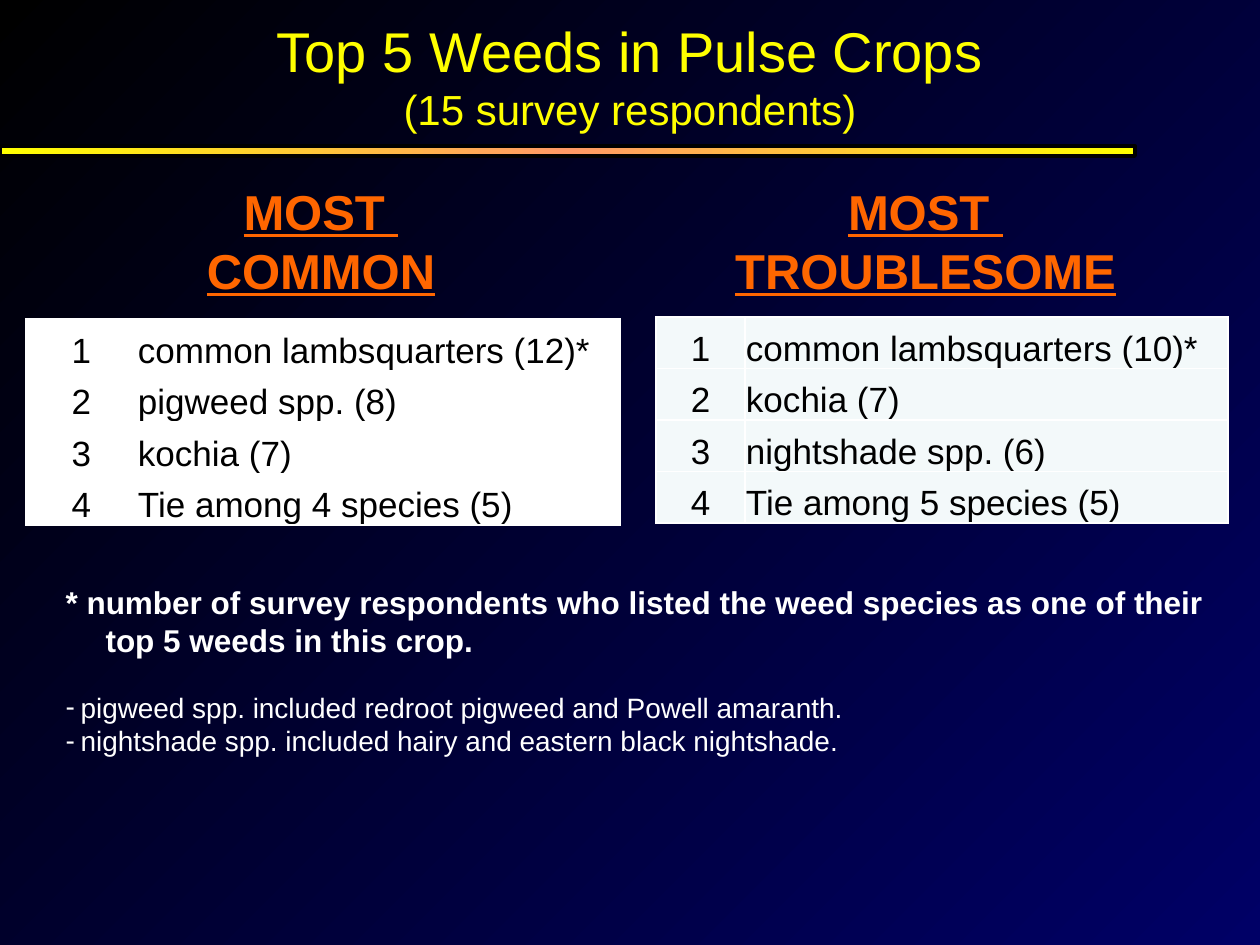
from copy import deepcopy
from dataclasses import dataclass

from lxml.etree import SubElement
from pptx import Presentation
from pptx.dml.color import RGBColor
from pptx.enum.shapes import MSO_SHAPE as Shape
from pptx.enum.text import MSO_ANCHOR as Anchor, MSO_AUTO_SIZE as AutoSize, PP_ALIGN as Align
from pptx.oxml.ns import qn
from pptx.util import Pt

PX = 914400 // 126  # EMU per px


@dataclass(frozen=True)
class Theme:
    font: str = "Arial"
    title: str = "FFFF00"
    heading: str = "FF6600"
    cell_text: str = "000000"
    notes: str = "FFFFFF"
    border: str = "FFFFFF"
    common_fill: str = "FFFFFF"
    troublesome_fill: str = "F3F9FA"
    rule_line: str = "000000"
    background: tuple = ((0, "000000"), (1, "000066"))
    rule: tuple = ((0, "FFFF00"), (0.5, "FF9966"), (1, "FFFF00"))
    title_size: int = 32
    subtitle_size: int = 24
    heading_size: int = 28
    cell_size: int = 20
    footnote_size: int = 18
    species_size: int = 16


THEME = Theme()


def rgb(color):
    return RGBColor.from_string(color)


def box(*lengths):
    return [length * PX for length in lengths]


def place(shape, left, top, width, height):
    shape.left, shape.top, shape.width, shape.height = box(left, top, width, height)


def add_run(paragraph, text, size, color, bold=False, underline=False):
    run = paragraph.add_run()
    run.text = text
    font = run.font
    font.name, font.size, font.bold, font.underline = THEME.font, Pt(size), bold, underline
    font.color.rgb = rgb(color)


def next_paragraph(frame, index):
    return frame.add_paragraph() if index else frame.paragraphs[0]


def paint_gradient(fill, element, stops, angle):
    fill.gradient()
    fill.gradient_angle = angle
    stop_list = next(element.iter(qn("a:gsLst")))
    for _ in range(len(stops) - len(stop_list)):
        stop_list.append(deepcopy(stop_list[-1]))
    for stop, (position, color) in zip(fill.gradient_stops, stops):
        stop.position = position
        stop.color.rgb = rgb(color)


def fill_title(title):
    place(title, 42, 0, 1176, 151)
    frame = title.text_frame
    frame.auto_size, frame.vertical_anchor = AutoSize.NONE, Anchor.MIDDLE
    lines = (("Top 5 Weeds in Pulse Crops", THEME.title_size),
             ("(15 survey respondents)", THEME.subtitle_size))
    for index, (text, size) in enumerate(lines):
        paragraph = next_paragraph(frame, index)
        paragraph.alignment = Align.CENTER
        add_run(paragraph, text, size, THEME.title)


def add_rule(slide):
    rule = slide.shapes.add_shape(Shape.RECTANGLE, *box(0, 146, 1135, 10))
    rule.shadow.inherit = False
    paint_gradient(rule.fill, rule._element, THEME.rule, 0)
    rule.line.color.rgb = rgb(THEME.rule_line)
    rule.line.width = Pt(2.25)


def add_heading(slide, left, width, lines):
    heading = slide.shapes.add_textbox(*box(left, 175, width, 131))
    frame = heading.text_frame
    frame.word_wrap = True
    for index, text in enumerate(lines):
        paragraph = next_paragraph(frame, index)
        paragraph.alignment = Align.CENTER
        add_run(paragraph, text, THEME.heading_size, THEME.heading, True, True)


def format_cell(cell, text, alignment, fill):
    cell.margin_left = cell.margin_right = cell.margin_top = PX
    cell.margin_bottom = 0
    cell.vertical_anchor = Anchor.BOTTOM
    properties = cell._tc.get_or_add_tcPr()
    for side in ("a:lnL", "a:lnR", "a:lnT", "a:lnB"):
        line = SubElement(properties, qn(side), w=str(Pt(1)))
        solid = SubElement(line, qn("a:solidFill"))
        SubElement(solid, qn("a:srgbClr"), val=THEME.border)
    cell.fill.solid()
    cell.fill.fore_color.rgb = rgb(fill)
    paragraph = cell.text_frame.paragraphs[0]
    paragraph.alignment = alignment
    add_run(paragraph, text, THEME.cell_size, THEME.cell_text)


def add_ranking(slide, left, top, rank_width, fill, weeds):
    weed_width = 483
    ranking = slide.shapes.add_table(
        len(weeds), 2, *box(left, top, rank_width + weed_width, 206)).table
    ranking.first_row = ranking.horz_banding = False
    for column, width in zip(ranking.columns, (rank_width, weed_width)):
        column.width = width * PX
    for row, weed in enumerate(weeds):
        format_cell(ranking.cell(row, 0), str(row + 1), Align.CENTER, fill)
        format_cell(ranking.cell(row, 1), weed, Align.LEFT, fill)


def add_note(frame, index, text, size, indent, gap=0, bullet=None, bold=False):
    paragraph = next_paragraph(frame, index)
    paragraph.space_before = Pt(gap)
    properties = paragraph._p.get_or_add_pPr()
    properties.set("marL", str(indent * PX))
    properties.set("indent", str(-indent * PX))
    if bullet:
        SubElement(properties, qn("a:buChar"), char=bullet)
    else:
        SubElement(properties, qn("a:buNone"))
    add_run(paragraph, text, size, THEME.notes, bold)


def fill_notes(notes):
    place(notes, 53, 577, 1165, 190)
    frame = notes.text_frame
    frame.auto_size, frame.vertical_anchor = AutoSize.SHAPE_TO_FIT_TEXT, Anchor.TOP
    add_note(frame, 0, "* number of survey respondents who listed the weed species "
             "as one of their top 5 weeds in this crop.",
             THEME.footnote_size, 40, bold=True)
    add_note(frame, 1, "pigweed spp. included redroot pigweed and Powell amaranth.",
             THEME.species_size, 15, gap=18, bullet="-")
    add_note(frame, 2, "nightshade spp. included hairy and eastern black nightshade.",
             THEME.species_size, 15, bullet="-")


def main():
    deck = Presentation()
    deck.slide_width, deck.slide_height = box(1260, 945)
    slide = deck.slides.add_slide(deck.slide_layouts[1])
    paint_gradient(slide.background.fill, slide._element, THEME.background, 315)

    # Title and rule
    fill_title(slide.shapes.title)
    add_rule(slide)

    # Most common weeds
    add_heading(slide, 170, 302, ("MOST ", "COMMON"))
    add_ranking(slide, 26, 319, 111, THEME.common_fill, (
        "common lambsquarters (12)*", "pigweed spp. (8)",
        "kochia (7)", "Tie among 4 species (5)"))

    # Most troublesome weeds
    add_heading(slide, 720, 411, ("MOST ", "TROUBLESOME"))
    add_ranking(slide, 656, 317, 89, THEME.troublesome_fill, (
        "common lambsquarters (10)*", "kochia (7)",
        "nightshade spp. (6)", "Tie among 5 species (5)"))

    # Footnote and species notes
    fill_notes(slide.placeholders[1])
    deck.save("out.pptx")


if __name__ == "__main__":
    main()
